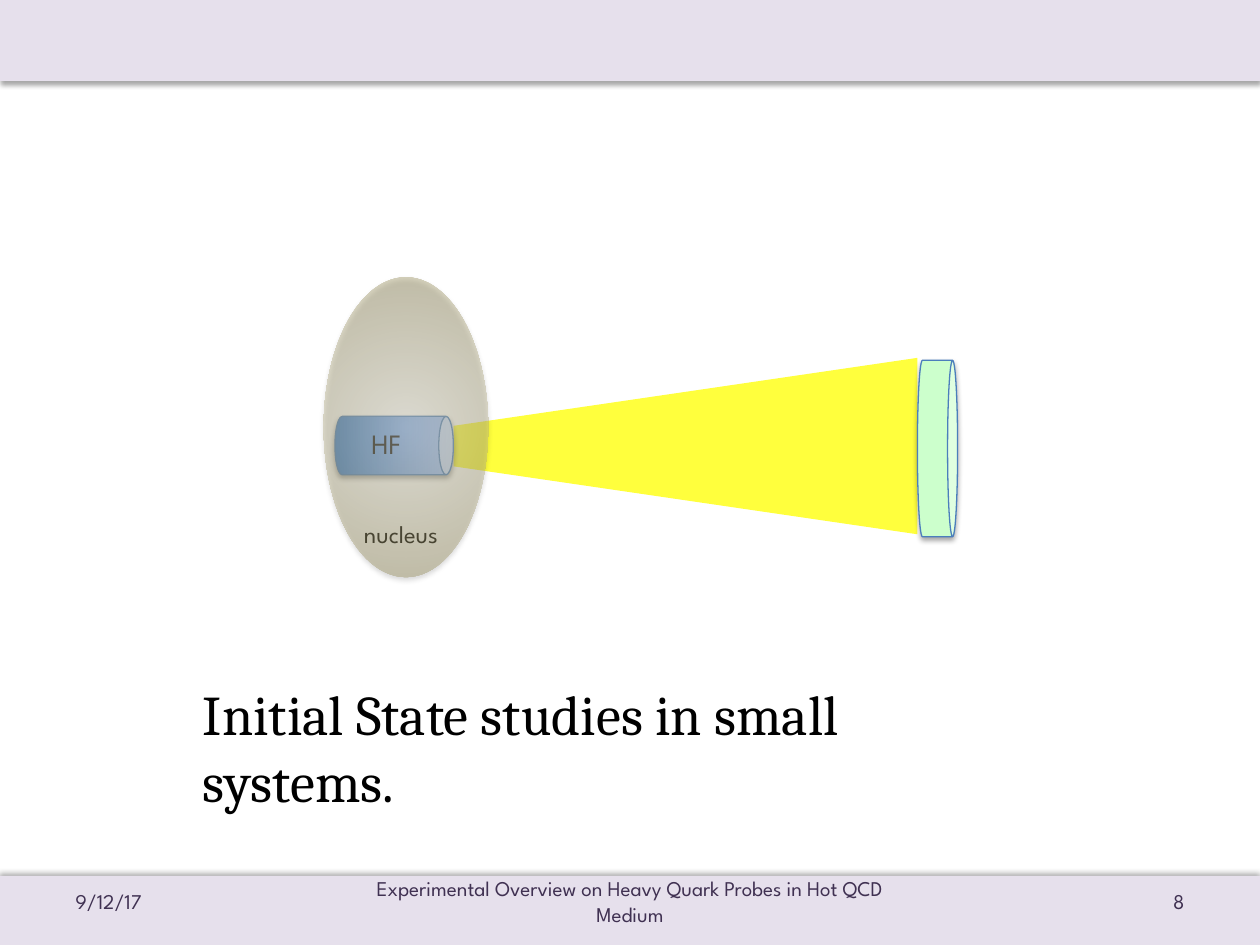
from dataclasses import dataclass

from lxml import etree
from pptx import Presentation
from pptx.dml.color import RGBColor
from pptx.enum import shapes, text
from pptx.oxml import parse_xml
from pptx.oxml.ns import nsdecls, qn
from pptx.util import Pt

SHAPE = shapes.MSO_SHAPE
ALIGN = text.PP_ALIGN
ANCHOR = text.MSO_ANCHOR


@dataclass(frozen=True)
class Theme:
    heading: str = "Cambria"
    body: str = "League Spartan"
    black: str = "000000"
    ink: str = "0D0D0D"
    footer: str = "403152"
    band: str = "E6E0EC"
    outline: str = "4B7EBC"
    beam: str = "FFFF00"
    plate: str = "CCFFCC"
    blues: tuple = ("3F80CE", "A4C4FF")
    tans: tuple = ("DDD9C3", "948A54")
    title_size: int = 32
    label_size: int = 16
    note_size: int = 14
    footer_size: int = 12


class SlideBuilder:
    def __init__(self, slide, theme):
        self.s = slide
        self.t = theme

    def shape(self, kind, box, fill, alpha=100, rot=0, line=None, shadow=None):
        """Add a preset shape; fill is a colour or an element from gradient()."""
        sp = self.s.shapes.add_shape(kind, *map(Pt, box))
        sp.rotation = rot
        sp.shadow.inherit = False
        sp.fill.solid()
        solid = sp._element.spPr.find(qn("a:solidFill"))
        if isinstance(fill, str):
            sp.fill.fore_color.rgb = RGBColor.from_string(fill)
            if alpha < 100:
                etree.SubElement(solid[0], qn("a:alpha"), val=str(alpha * 1000))
        else:
            solid.getparent().replace(solid, fill)
        if line:
            sp.line.color.rgb = RGBColor.from_string(line)
            sp.line.width = Pt(0.75)
        else:
            sp.line.fill.background()
        if shadow is not None:
            self.shadow(sp, shadow)
        return sp

    def shadow(self, sp, angle):
        effects = sp._element.spPr.find(qn("a:effectLst"))
        effects.append(parse_xml(
            f'<a:outerShdw {nsdecls("a")} blurRad="{Pt(3.1)}" dist="{Pt(1.8)}" '
            f'dir="{angle * 60000}" rotWithShape="0"><a:srgbClr val="{self.t.black}">'
            '<a:alpha val="35000"/></a:srgbClr></a:outerShdw>'))

    def gradient(self, colors, direction, alpha=100):
        stops = "".join(
            f'<a:gs pos="{pos}"><a:srgbClr val="{c}">'
            f'<a:alpha val="{alpha * 1000}"/></a:srgbClr></a:gs>'
            for pos, c in zip((0, 100000), colors))
        return parse_xml(f'<a:gradFill {nsdecls("a")} rotWithShape="1">'
                         f'<a:gsLst>{stops}</a:gsLst>{direction}</a:gradFill>')

    def set_text(self, sp, words, size, color, font, align, anchor, wrap):
        tf = sp.text_frame
        tf.text = words
        tf.word_wrap = wrap
        tf.auto_size = text.MSO_AUTO_SIZE.NONE
        tf.vertical_anchor = anchor
        p = tf.paragraphs[0]
        p.alignment = align
        p.font.name = font
        p.font.size = Pt(size)
        p.font.color.rgb = RGBColor.from_string(color)

    def label(self, words, box, size, color, align=ALIGN.LEFT,
              anchor=ANCHOR.TOP, wrap=False):
        sp = self.s.shapes.add_textbox(*map(Pt, box))
        self.set_text(sp, words, size, color, self.t.body, align, anchor, wrap)

    def title(self, words, box):
        sp = self.s.shapes.title
        sp.left, sp.top, sp.width, sp.height = map(Pt, box)
        self.set_text(sp, words, self.t.title_size, self.t.black,
                      self.t.heading, ALIGN.LEFT, ANCHOR.TOP, True)


def main():
    prs = Presentation()
    prs.slide_width, prs.slide_height = Pt(720), Pt(540)
    t = Theme()
    b = SlideBuilder(prs.slides.add_slide(prs.slide_layouts[5]), t)

    # Header and footer bands
    b.shape(SHAPE.RECTANGLE, (0, 0, 720, 46.2), t.band, shadow=90)
    b.shape(SHAPE.RECTANGLE, (0, 500.5, 720, 39.5), t.band, shadow=256)

    # Footer texts
    for words, left, width, align in (
        ("9/12/17", 36, 168, ALIGN.LEFT),
        ("Experimental Overview on Heavy Quark Probes in Hot QCD Medium",
         189, 342, ALIGN.CENTER),
        ("8", 516, 168, ALIGN.RIGHT),
    ):
        b.label(words, (left, 500.5, width, 28.8), t.footer_size, t.footer,
                align, ANCHOR.MIDDLE, True)

    # Beam from the heavy-flavour probe to the detector plate
    beam = b.shape(SHAPE.TRAPEZOID, (341.3, 122.4, 100.8, 265), t.beam,
                   alpha=76, rot=270)
    beam.adjustments[0] = 0.385
    along = '<a:lin ang="16200000" scaled="0"/>'
    b.shape(SHAPE.CAN, (208.5, 220.8, 33.4, 67.7), b.gradient(t.blues, along),
            rot=90, line=t.outline, shadow=90)
    b.shape(SHAPE.CAN, (485.3, 244.8, 100.8, 23), t.plate,
            rot=90, line=t.outline, shadow=90)
    b.label("HF", (205.2, 240.5, 33.1, 26.6), t.label_size, t.ink)
    b.label("nucleus", (200.9, 293, 58.3, 24.5), t.note_size, t.black)

    # Translucent nucleus over the probe
    radial = ('<a:path path="circle"><a:fillToRect l="50000" t="50000" '
              'r="50000" b="50000"/></a:path>')
    b.shape(SHAPE.OVAL, (185, 158.4, 94, 171.4),
            b.gradient(t.tans, radial, alpha=42), shadow=90)

    # Slide title below the drawing
    b.title("Initial State studies in small systems.", (108.7, 384.5, 491.8, 46))
    prs.save("out.pptx")


if __name__ == "__main__":
    main()
